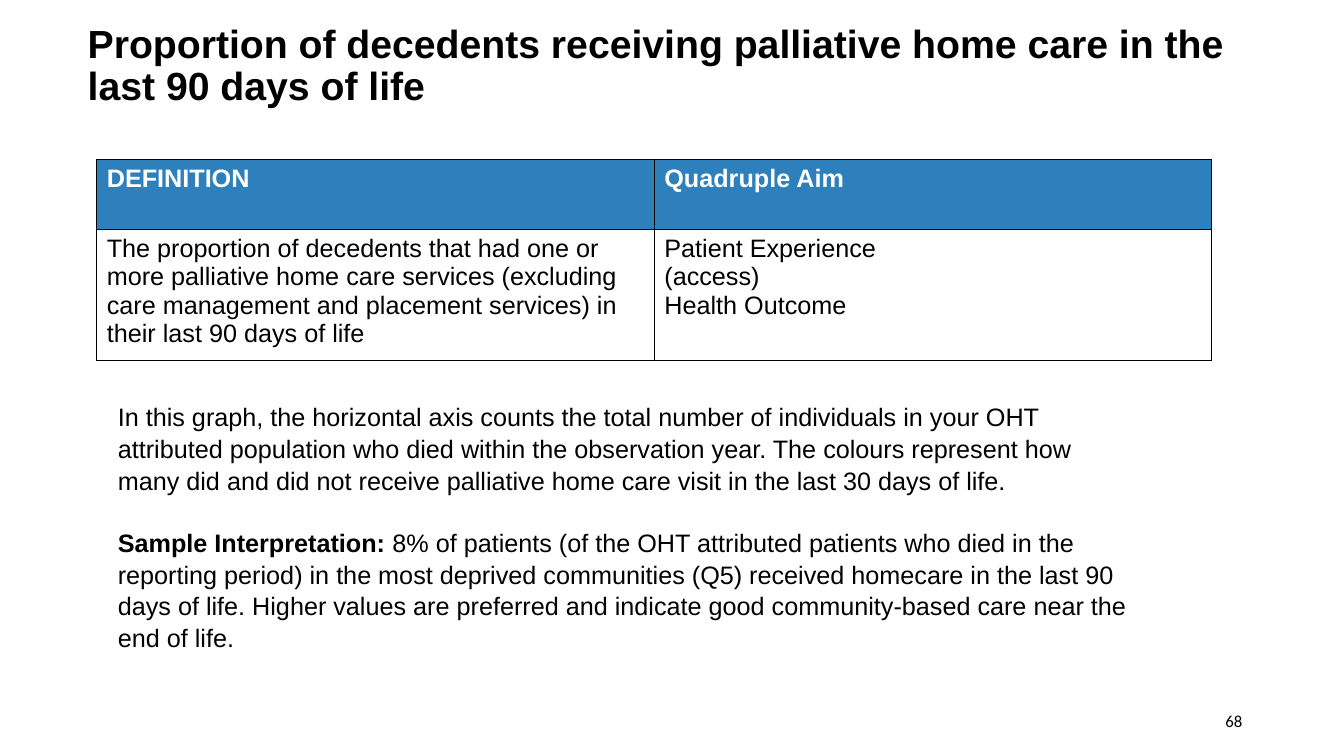
from lxml import etree
from pptx import Presentation
from pptx.dml.color import RGBColor
from pptx.enum.text import MSO_ANCHOR, MSO_AUTO_SIZE, PP_ALIGN
from pptx.oxml.ns import qn
from pptx.util import Pt

PX = 9144  # EMU per px, 100 px to the inch
BLACK = RGBColor(0x00, 0x00, 0x00)
WHITE = RGBColor(0xFF, 0xFF, 0xFF)
BLUE = RGBColor(0x2E, 0x80, 0xBC)

TITLE = "Proportion of decedents receiving palliative home care in the last 90 days of life"
HEADINGS = ["DEFINITION", "Quadruple Aim"]
DEFINITION = ("The proportion of decedents that had one or more palliative home care services "
              "(excluding care management and placement services) in their last 90 days of life")
AIMS = ["Patient Experience \n(access)", "Health Outcome"]
GRAPH_NOTE = ("In this graph, the horizontal axis counts the total number of individuals in "
              "your OHT attributed population who died within the observation year. "
              "The colours represent how many did and did not receive palliative home care "
              "visit in the last 30 days of life.")
SAMPLE_LABEL = "Sample Interpretation: "
SAMPLE = ("8% of patients (of the OHT attributed patients who died in the reporting period) "
          "in the most deprived communities (Q5) received homecare in the last 90 days of life. "
          "Higher values are preferred and indicate good community-based care near the end of life.")


def emu(*lengths):
    return [length * PX for length in lengths]


def add_text(para, text, size=18, font="Arial", color=BLACK, bold=False):
    """Append formatted text; a newline becomes a line break."""
    for index, line in enumerate(text.split("\n")):
        if index:
            para.add_line_break()
        span = para.add_run()
        span.text = line
        span.font.size = Pt(size)
        span.font.name = font
        span.font.color.rgb = color
        span.font.bold = bold


def add_box(page, box):
    frame = page.shapes.add_textbox(*emu(*box)).text_frame
    frame.word_wrap = True
    return frame


def add_title(page, box):
    title = page.shapes.title
    title.left, title.top, title.width, title.height = emu(*box)
    frame = title.text_frame
    frame.vertical_anchor = MSO_ANCHOR.MIDDLE
    frame.auto_size = MSO_AUTO_SIZE.NONE
    para = frame.paragraphs[0]
    para.alignment = PP_ALIGN.LEFT
    para.line_spacing = 0.9
    add_text(para, TITLE, size=28, bold=True)


def set_borders(cell):
    props = cell._tc.get_or_add_tcPr()
    for position, side in enumerate(("lnL", "lnR", "lnT", "lnB")):
        line = etree.Element(qn(f"a:{side}"), w=str(Pt(1)))
        fill = etree.SubElement(line, qn("a:solidFill"))
        etree.SubElement(fill, qn("a:srgbClr"), val=str(BLACK))
        props.insert(position, line)


def add_definition_table(page, box, row_heights):
    rows = [[[heading] for heading in HEADINGS], [[DEFINITION], AIMS]]
    table = page.shapes.add_table(len(rows), len(HEADINGS), *emu(*box)).table
    for row, height in zip(table.rows, row_heights):
        row.height = height * PX
    for r, row in enumerate(rows):
        header = r == 0
        for c, lines in enumerate(row):
            cell = table.cell(r, c)
            cell.fill.solid()
            cell.fill.fore_color.rgb = BLUE if header else WHITE
            set_borders(cell)
            frame = cell.text_frame
            for index, line in enumerate(lines):
                para = frame.add_paragraph() if index else frame.paragraphs[0]
                add_text(para, line, color=WHITE if header else BLACK, bold=header)


def add_interpretation(page, box):
    frame = add_box(page, box)
    note, sample = frame.paragraphs[0], frame.add_paragraph()
    note.line_spacing = sample.line_spacing = 1.05
    sample.space_before = Pt(21.6)
    add_text(note, GRAPH_NOTE)
    add_text(sample, SAMPLE_LABEL, bold=True)
    add_text(sample, SAMPLE)


def add_page_number(page, box):
    frame = add_box(page, box)
    frame.vertical_anchor = MSO_ANCHOR.MIDDLE
    para = frame.paragraphs[0]
    para.alignment = PP_ALIGN.RIGHT
    add_text(para, "68", size=12, font="Calibri")


def main():
    deck = Presentation()
    deck.slide_width, deck.slide_height = emu(1333, 750)
    page = deck.slides.add_slide(deck.slide_layouts.get_by_name("Title Only"))
    add_title(page, (77, 24, 1180, 84))
    add_definition_table(page, (96, 158, 1106, 200), row_heights=(70, 130))
    add_interpretation(page, (107, 392, 1032, 252))
    add_page_number(page, (942, 695, 300, 40))
    deck.save("out.pptx")


if __name__ == "__main__":
    main()
